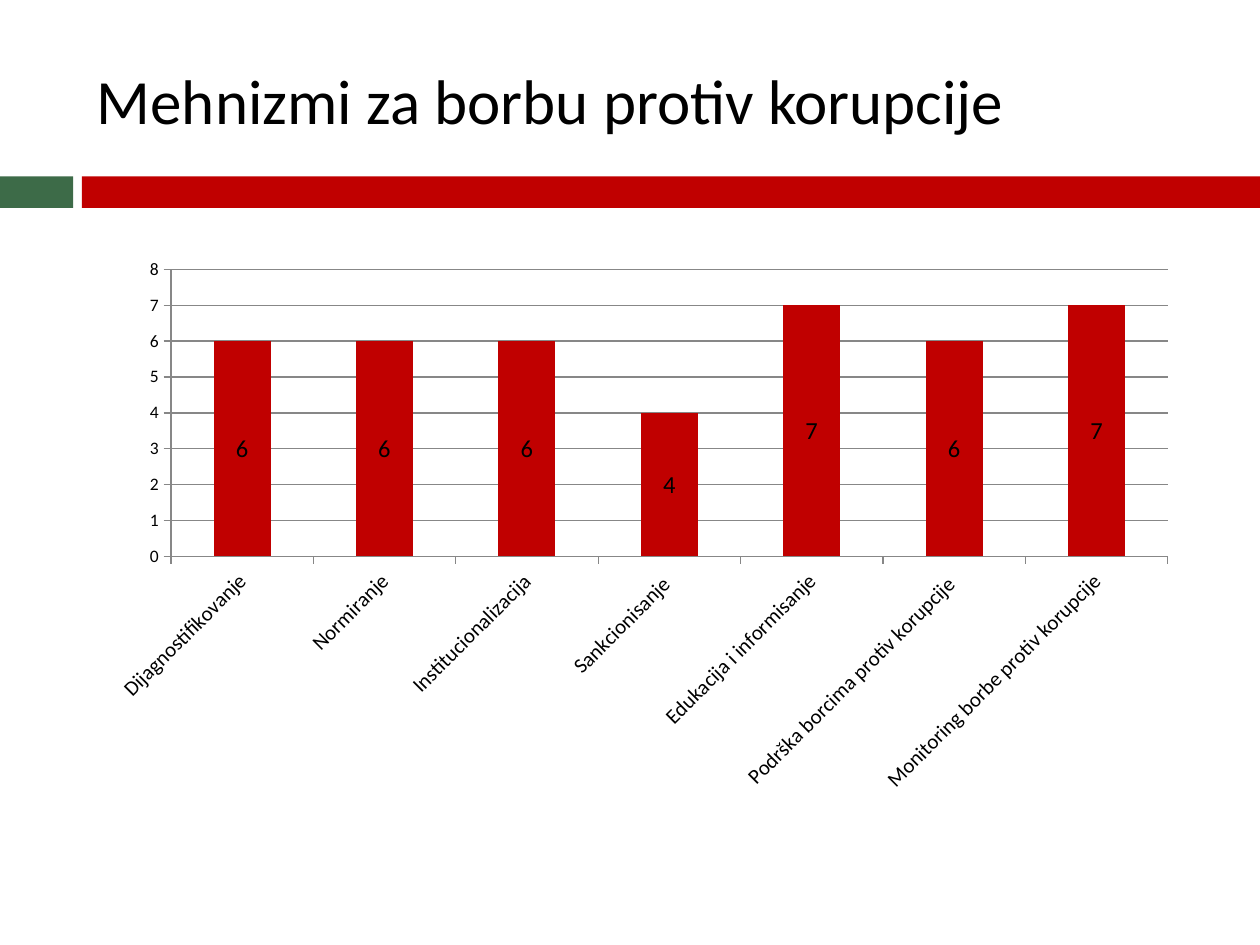
from dataclasses import dataclass

from lxml import etree
from pptx import Presentation
from pptx import util as u
from pptx.chart.chart import Chart
from pptx.chart.data import CategoryChartData
from pptx.dml.color import RGBColor
from pptx.enum import chart as charts, shapes, text
from pptx.oxml.ns import qn

RED = RGBColor(0xC0, 0x00, 0x00)
GREEN = RGBColor(0x3D, 0x6B, 0x48)
BLACK = RGBColor(0x00, 0x00, 0x00)
GRAY = RGBColor(0x87, 0x87, 0x87)
FONT = "Calibri"
CONTENT_LEFT, CONTENT_WIDTH = 0.67, 8.92


@dataclass(frozen=True)
class Band:
    left: float
    width: float
    color: RGBColor


@dataclass(frozen=True)
class Mechanism:
    name: str
    score: int


BANDS = [Band(0, 0.58, GREEN), Band(0.65, 9.35, RED)]
MECHANISMS = [
    Mechanism("Dijagnostifikovanje", 6),
    Mechanism("Normiranje", 6),
    Mechanism("Institucionalizacija", 6),
    Mechanism("Sankcionisanje ", 4),
    Mechanism("Edukacija i informisanje", 7),
    Mechanism("Podrška borcima protiv korupcije ", 6),
    Mechanism("Monitoring borbe protiv korupcije", 7),
]
PLOT_LAYOUT = {
    "layoutTarget": "inner",
    "xMode": "edge",
    "yMode": "edge",
    "x": 0.077,
    "y": 0.079,
    "w": 0.887,
    "h": 0.463,
}


def draw_band(page, band: Band) -> None:
    box = page.shapes.add_shape(
        shapes.MSO_SHAPE.RECTANGLE,
        u.Inches(band.left), u.Inches(1.4), u.Inches(band.width), u.Inches(0.25),
    )
    box.shadow.inherit = False
    box.fill.solid()
    box.fill.fore_color.rgb = band.color
    box.line.fill.background()


def draw_title(page, wording: str) -> None:
    box = page.shapes.add_textbox(
        u.Inches(CONTENT_LEFT), u.Inches(0.25), u.Inches(CONTENT_WIDTH), u.Inches(1.08)
    )
    frame = box.text_frame
    frame.word_wrap = True
    frame.vertical_anchor = text.MSO_ANCHOR.MIDDLE
    para = frame.paragraphs[0]
    para.text = wording
    para.font.name = FONT
    para.font.size = u.Pt(36)
    para.font.color.rgb = BLACK


def place_plot(chart: Chart) -> None:
    plot_area = chart._chartSpace.find(f".//{qn('c:plotArea')}")
    for old_layout in plot_area.findall(qn("c:layout")):
        plot_area.remove(old_layout)
    layout = etree.Element(qn("c:layout"))
    manual = etree.SubElement(layout, qn("c:manualLayout"))
    for tag, value in PLOT_LAYOUT.items():
        etree.SubElement(manual, qn(f"c:{tag}")).set("val", str(value))
    plot_area.insert(0, layout)


def draw_chart(page, mechanisms: list[Mechanism]) -> None:
    data = CategoryChartData()
    data.categories = [mechanism.name for mechanism in mechanisms]
    data.add_series("Series 1", [mechanism.score for mechanism in mechanisms])
    chart = page.shapes.add_chart(
        charts.XL_CHART_TYPE.COLUMN_STACKED,
        u.Inches(CONTENT_LEFT), u.Inches(1.75), u.Inches(CONTENT_WIDTH), u.Inches(4.92),
        data,
    ).chart
    chart.has_title = False
    chart.has_legend = False
    chart.font.name = FONT
    chart.font.size = u.Pt(10)
    chart.font.color.rgb = BLACK
    place_plot(chart)

    for axis in (chart.category_axis, chart.value_axis):
        axis.major_tick_mark = charts.XL_TICK_MARK.OUTSIDE
        axis.format.line.color.rgb = GRAY
        axis.format.line.width = u.Pt(0.75)
    chart.category_axis.tick_labels.font.size = u.Pt(12)
    label_body = chart.category_axis._element.find(f"{qn('c:txPr')}/{qn('a:bodyPr')}")
    label_body.set("rot", str(-45 * 60000))
    value_axis = chart.value_axis
    value_axis.minimum_scale, value_axis.maximum_scale = 0, 8
    value_axis.major_unit = 1
    value_axis.has_major_gridlines = True
    value_axis.major_gridlines.format.line.color.rgb = GRAY
    value_axis.major_gridlines.format.line.width = u.Pt(0.75)

    plot = chart.plots[0]
    plot.vary_by_categories = False
    plot.gap_width = 150
    plot.overlap = 100
    series = plot.series[0]
    series.format.fill.solid()
    series.format.fill.fore_color.rgb = RED
    labels = series.data_labels
    labels.show_value = True
    labels.position = charts.XL_LABEL_POSITION.CENTER
    labels.font.size = u.Pt(14)
    labels.font.name = FONT
    labels.font.color.rgb = BLACK


def main() -> None:
    deck = Presentation()
    deck.slide_width, deck.slide_height = u.Inches(10), u.Inches(7.5)
    page = deck.slides.add_slide(deck.slide_layouts[6])
    for band in BANDS:
        draw_band(page, band)
    draw_title(page, "Mehnizmi za borbu protiv korupcije")
    draw_chart(page, MECHANISMS)
    deck.save("out.pptx")


if __name__ == "__main__":
    main()
